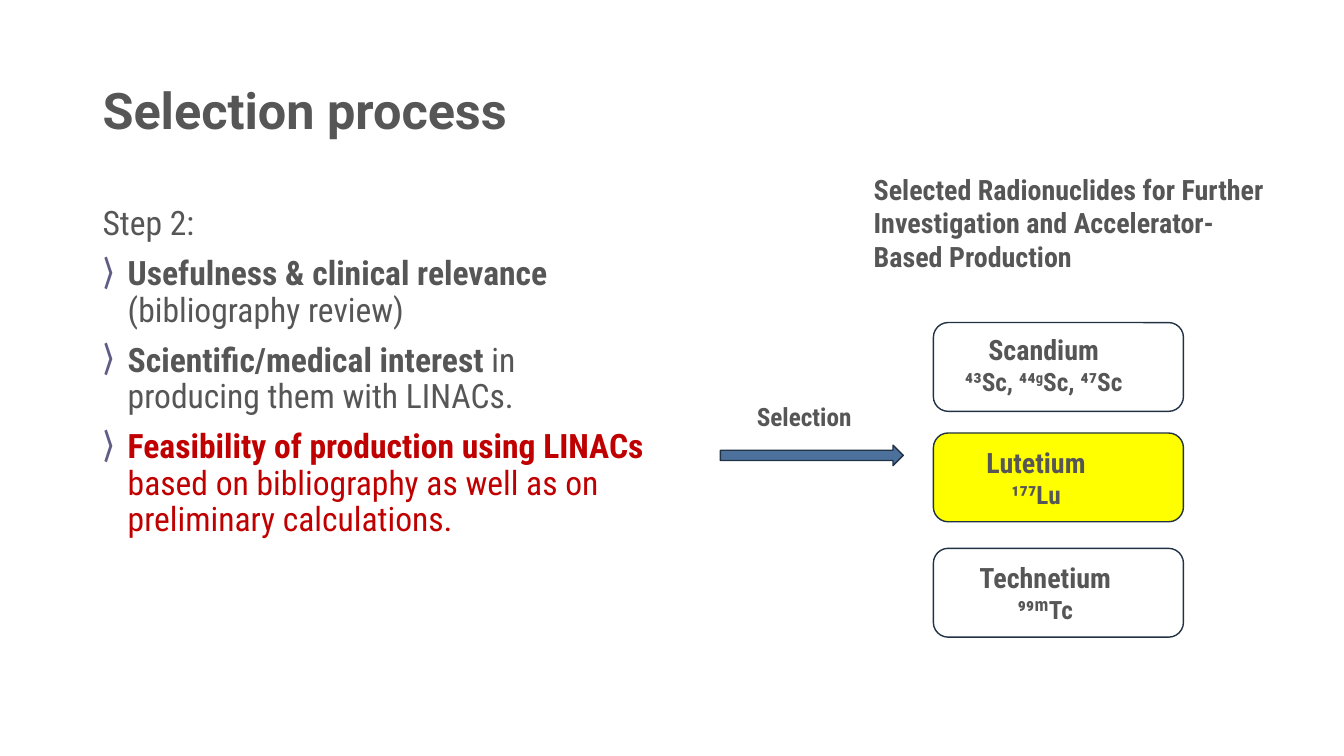
from dataclasses import dataclass, field

from lxml.etree import SubElement
from pptx import Presentation
from pptx.dml.color import RGBColor
from pptx.enum.shapes import MSO_SHAPE
from pptx.enum.text import MSO_ANCHOR, PP_ALIGN
from pptx.oxml.ns import qn
from pptx.util import Pt

GREY, RED, BULLET, OUTLINE = "565656", "C00000", "5F5C85", "213244"
BLUE, YELLOW = "4B719C", "FFFF00"
BODY_FONT = "Roboto Condensed"


@dataclass
class Run:
    text: str
    size: float
    bold: bool = True
    color: str = GREY
    font: str = BODY_FONT
    raised: bool = False


@dataclass
class Para:
    runs: list[Run]
    bullet: bool = False
    format: dict = field(default_factory=dict)


@dataclass
class Element:
    name: str
    isotopes: list[Run]
    top: float
    text_left: float
    text_top: float
    fill: str | None = None


def rgb(value: str) -> RGBColor:
    return RGBColor.from_string(value)


def add_bullet(p) -> None:
    pPr = p._p.get_or_add_pPr()
    pPr.set("marL", str(Pt(18)))
    pPr.set("indent", str(-Pt(18)))
    color = SubElement(pPr, qn("a:buClr"))
    SubElement(color, qn("a:srgbClr")).set("val", BULLET)
    SubElement(pPr, qn("a:buFont")).set("typeface", BODY_FONT)
    SubElement(pPr, qn("a:buChar")).set("char", "⟩")


def add_text(s, left: float, top: float, width: float, height: float,
             paras: list[Para], anchor=MSO_ANCHOR.TOP) -> None:
    tf = s.shapes.add_textbox(Pt(left), Pt(top), Pt(width), Pt(height)).text_frame
    tf.word_wrap = True
    tf.vertical_anchor = anchor
    for i, para in enumerate(paras):
        p = tf.add_paragraph() if i else tf.paragraphs[0]
        if para.bullet:
            add_bullet(p)
        for key, value in para.format.items():
            setattr(p, key, value)
        for run in para.runs:
            r = p.add_run()
            r.text = run.text
            values = {"name": run.font, "size": Pt(run.size), "bold": run.bold}
            for key, value in values.items():
                setattr(r.font, key, value)
            r.font.color.rgb = rgb(run.color)
            if run.raised:
                r.font._element.set("baseline", "30000")


def add_outlined(s, kind, left: float, top: float, width: float, height: float,
                 fill: str | None) -> None:
    sp = s.shapes.add_shape(kind, Pt(left), Pt(top), Pt(width), Pt(height))
    sp.shadow.inherit = False
    if fill:
        sp.fill.solid()
        sp.fill.fore_color.rgb = rgb(fill)
    else:
        sp.fill.background()
    sp.line.color.rgb = rgb(OUTLINE)
    sp.line.width = Pt(1)


def add_element(s, element: Element) -> None:
    add_outlined(s, MSO_SHAPE.ROUNDED_RECTANGLE, 666.7, element.top, 178.6, 63.4,
                 element.fill)
    centred = {"alignment": PP_ALIGN.CENTER}
    add_text(s, element.text_left, element.text_top, 162, 53.3, [
        Para([Run(element.name, 20)], format=centred),
        Para(element.isotopes, format=centred),
    ])


STEPS = [
    ("Usefulness & clinical relevance", " (bibliography review)", GREY),
    ("Scientific/medical interest", " in producing them with LINACs.", GREY),
    ("Feasibility of production using LINACs",
     " based on bibliography as well as on preliminary calculations.", RED),
]
ELEMENTS = [
    Element("Scandium",
            [Run("⁴³Sc, ⁴⁴", 18), Run("g", 18, raised=True), Run("Sc, ⁴⁷Sc", 18)],
            230.4, 664.5, 234),
    Element("Lutetium", [Run("¹⁷⁷Lu", 18)], 309.3, 659, 314.6, YELLOW),
    Element("Technetium", [Run("⁹⁹ᵐTc", 18)], 391.7, 665.6, 396.7),
]


def main() -> None:
    prs = Presentation()
    prs.slide_width, prs.slide_height = Pt(960), Pt(540)
    s = prs.slides.add_slide(prs.slide_layouts[6])

    # Title
    add_text(s, 66.2, 28.8, 860.4, 104.4,
             [Para([Run("Selection process", 36, font="Roboto")],
                   format={"line_spacing": 0.9})], MSO_ANCHOR.MIDDLE)

    # Selection criteria
    step_format = {"line_spacing": 0.9, "space_before": Pt(10)}
    criteria = [Para([Run("Step 2:", 24, False)], format={"line_spacing": 0.9})]
    criteria += [Para([Run(lead, 24, True, color), Run(rest, 24, False, color)],
                      True, step_format) for lead, rest, color in STEPS]
    add_text(s, 66.2, 144, 408.2, 342.7, criteria)

    # Selected radionuclides
    heading = ("Selected Radionuclides for Further Investigation "
               "and Accelerator-Based Production")
    add_text(s, 617, 119.5, 295.2, 80, [Para([Run(heading, 20)])])
    for element in ELEMENTS:
        add_element(s, element)

    # Selection arrow
    add_outlined(s, MSO_SHAPE.RIGHT_ARROW, 514.6, 318, 130.6, 14.6, BLUE)
    add_text(s, 533.5, 283, 110, 29, [Para([Run("Selection", 18)])])

    prs.save("out.pptx")


if __name__ == "__main__":
    main()
